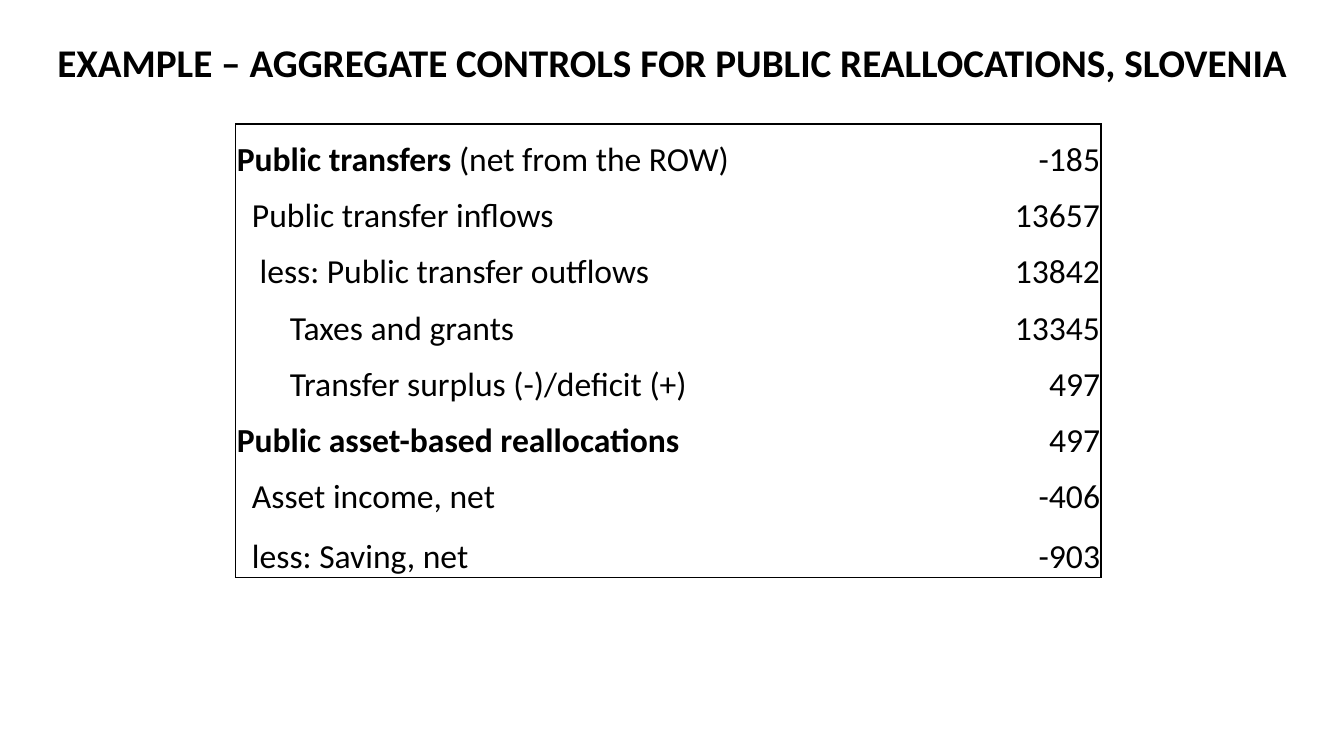
"""Build a slide with the aggregate controls for public reallocations in Slovenia."""
from lxml.etree import SubElement
from pptx import Presentation
from pptx.dml.color import RGBColor
from pptx.enum.text import MSO_ANCHOR as Anchor, PP_ALIGN as Align
from pptx.oxml.ns import qn
from pptx.util import Pt

TITLE = "EXAMPLE – AGGREGATE CONTROLS FOR PUBLIC REALLOCATIONS, SLOVENIA"
ACCOUNTS = [
    ("Public transfers ", "(net from the ROW)", 0, "-185"),
    ("", "Public transfer inflows", 2, "13657"),
    ("", "less: Public transfer outflows", 3, "13842"),
    ("", "Taxes and grants", 7, "13345"),
    ("", "Transfer surplus (-)/deficit (+)", 7, "497"),
    ("Public asset-based reallocations", "", 0, "497"),
    ("", "Asset income, net", 2, "-406"),
    ("", "less: Saving, net", 2, "-903"),
]

FONT = "Calibri"
BLACK = RGBColor(0, 0, 0)
SLIDE_WIDTH, SLIDE_HEIGHT = 960, 540
TABLE_LEFT, TABLE_TOP = 168.5, 88.6
COLUMN_WIDTHS = (485, 133)
ROW_HEIGHT, LAST_ROW_HEIGHT = 40.2, 42.4
INDENT_STEP = 5.42


def add_run(paragraph, text, size, bold):
    run = paragraph.add_run()
    run.text = text
    run.font.name = FONT
    run.font.size = Pt(size)
    run.font.bold = bold
    run.font.color.rgb = BLACK


def set_borders(cell, drawn_sides):
    properties = cell._tc.get_or_add_tcPr()
    for side in "LRTB":
        line = SubElement(properties, qn(f"a:ln{side}"), w=str(Pt(1)))
        if side in drawn_sides:
            fill = SubElement(line, qn("a:solidFill"))
            SubElement(fill, qn("a:srgbClr"), val=str(BLACK))
        else:
            SubElement(line, qn("a:noFill"))


def format_cell(cell, drawn_sides):
    set_borders(cell, drawn_sides)
    cell.fill.background()
    cell.vertical_anchor = Anchor.BOTTOM
    cell.margin_left = cell.margin_right = cell.margin_top = Pt(0.7)
    cell.margin_bottom = Pt(0)


def add_title(slide):
    box = slide.shapes.add_textbox(Pt(0), Pt(21.6), Pt(SLIDE_WIDTH), Pt(49.7))
    frame = box.text_frame
    frame.word_wrap = True
    frame.vertical_anchor = Anchor.MIDDLE
    paragraph = frame.paragraphs[0]
    paragraph.alignment = Align.CENTER
    paragraph.line_spacing = 0.9
    add_run(paragraph, TITLE, 28, True)


def add_accounts(slide):
    last = len(ACCOUNTS) - 1
    height = ROW_HEIGHT * last + LAST_ROW_HEIGHT
    table = slide.shapes.add_table(
        len(ACCOUNTS), len(COLUMN_WIDTHS), Pt(TABLE_LEFT), Pt(TABLE_TOP),
        Pt(sum(COLUMN_WIDTHS)), Pt(height)).table
    table.first_row = table.horz_banding = False
    for column, width in zip(table.columns, COLUMN_WIDTHS):
        column.width = Pt(width)
    for index, (heading, label, indent, amount) in enumerate(ACCOUNTS):
        table.rows[index].height = Pt(LAST_ROW_HEIGHT if index == last else ROW_HEIGHT)
        outer = {0: "T", last: "B"}.get(index, "")
        name_cell, amount_cell = table.cell(index, 0), table.cell(index, 1)
        format_cell(name_cell, "L" + outer)
        format_cell(amount_cell, "R" + outer)

        paragraph = name_cell.text_frame.paragraphs[0]
        paragraph._p.get_or_add_pPr().set("marL", str(Pt(indent * INDENT_STEP)))
        for text, bold in ((heading, True), (label, False)):
            if text:
                add_run(paragraph, text, 24, bold)

        paragraph = amount_cell.text_frame.paragraphs[0]
        paragraph.alignment = Align.RIGHT
        add_run(paragraph, amount, 24, False)


def main():
    presentation = Presentation()
    presentation.slide_width = Pt(SLIDE_WIDTH)
    presentation.slide_height = Pt(SLIDE_HEIGHT)
    slide = presentation.slides.add_slide(presentation.slide_layouts[6])
    add_title(slide)
    add_accounts(slide)
    presentation.save("out.pptx")


if __name__ == "__main__":
    main()
